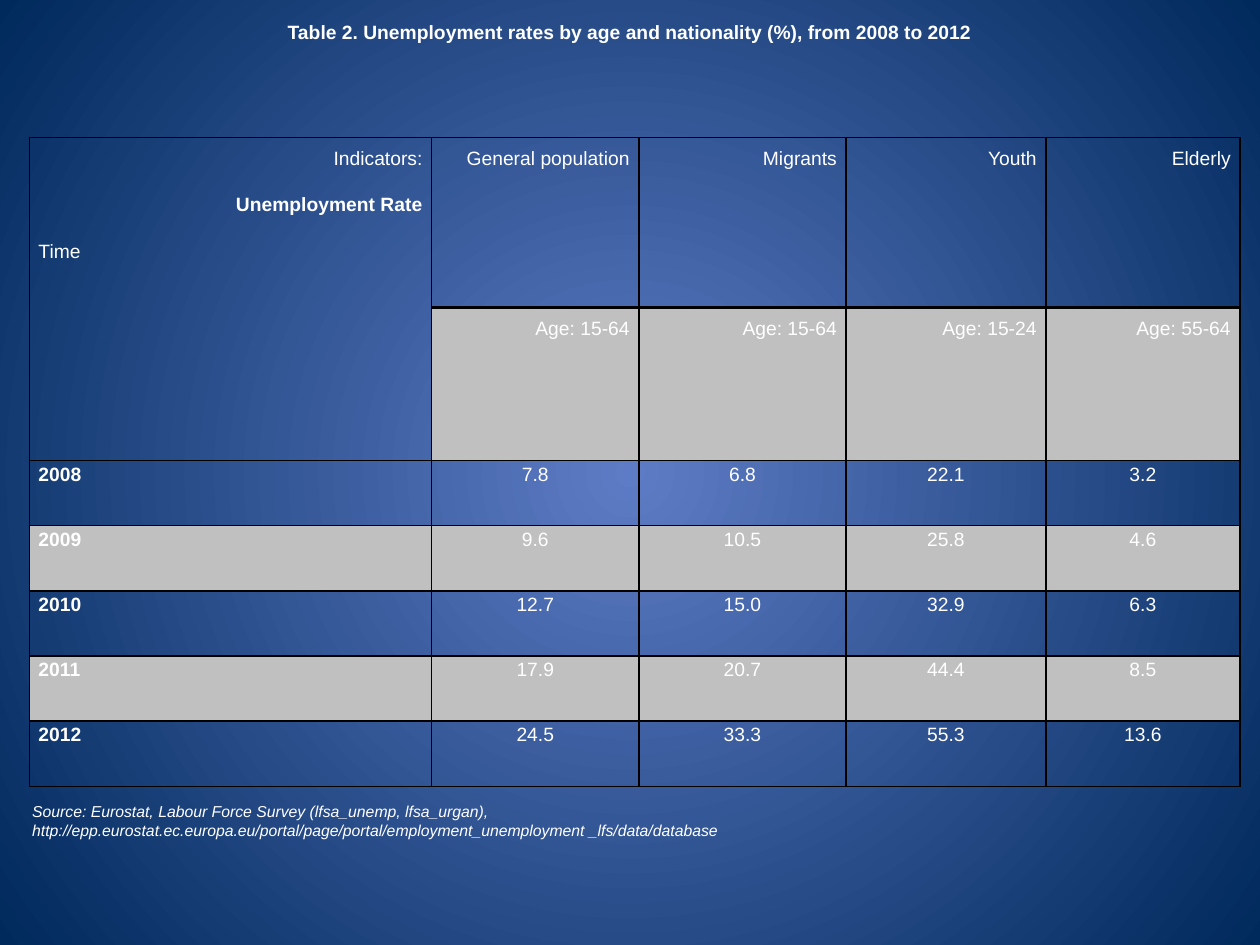
"""Build a slide with a table of unemployment rates by age and nationality."""
import pptx
import pptx.dml.color
import pptx.enum.text
import pptx.oxml
import pptx.oxml.ns
import pptx.util

Pt = pptx.util.Pt
Align = pptx.enum.text.PP_ALIGN
Anchor = pptx.enum.text.MSO_ANCHOR
COLORS = {"centre": "5E7CC5", "edge": "00295C", "text": "FFFFFF", "band": "C0C0C0", "line": "000000"}


def add_line(frame, number, text, size, align, bold=False, italic=False):
    para = frame.paragraphs[0] if number == 0 else frame.add_paragraph()
    para.alignment = align
    span = para.add_run()
    span.text = text
    span.font.name = "Arial"
    span.font.size = Pt(size)
    span.font.bold = bold
    span.font.italic = italic
    span.font.color.rgb = pptx.dml.color.RGBColor.from_string(COLORS["text"])
    return para


def add_border(cell, side, width):
    cell._tc.get_or_add_tcPr().append(pptx.oxml.parse_xml(
        f'<a:ln{side} {pptx.oxml.ns.nsdecls("a")} w="{Pt(width)}"><a:solidFill>'
        f'<a:srgbClr val="{COLORS["line"]}"/></a:solidFill></a:ln{side}>'))


deck = pptx.Presentation()
deck.slide_width, deck.slide_height = Pt(720), Pt(540)
page = deck.slides.add_slide(deck.slide_layouts[5])

fill = page.background.fill
fill.gradient()
for stop, name in zip(fill.gradient_stops, ("centre", "edge")):
    stop.color.rgb = pptx.dml.color.RGBColor.from_string(COLORS[name])
linear = page.element.find(".//" + pptx.oxml.ns.qn("a:lin"))
linear.getparent().replace(linear, pptx.oxml.parse_xml(
    f'<a:path {pptx.oxml.ns.nsdecls("a")} path="circle">'
    '<a:fillToRect l="50000" t="50000" r="50000" b="50000"/></a:path>'))

title = page.shapes.title
title.left, title.top, title.width, title.height = Pt(0), Pt(0), Pt(720), Pt(36)
title.text_frame.vertical_anchor = Anchor.MIDDLE
add_line(title.text_frame, 0, "Table 2. Unemployment rates by age and nationality (%), from 2008 to 2012",
         11, Align.CENTER, bold=True)

rows = [
    ["Indicators:\nUnemployment Rate\nTime", "General population", "Migrants", "Youth", "Elderly"],
    ["", "Age: 15-64", "Age: 15-64", "Age: 15-24", "Age: 55-64"],
    ["2008", "7.8", "6.8", "22.1", "3.2"],
    ["2009", "9.6", "10.5", "25.8", "4.6"],
    ["2010", "12.7", "15.0", "32.9", "6.3"],
    ["2011", "17.9", "20.7", "44.4", "8.5"],
    ["2012", "24.5", "33.3", "55.3", "13.6"],
]
widths = [229.9, 118.4, 118.4, 114.2, 110.9]
heights = [97, 87.5] + [37.25] * 5
table = page.shapes.add_table(len(rows), len(widths), Pt(16.8), Pt(78.7),
                              Pt(sum(widths)), Pt(sum(heights))).table
table.first_row = table.horz_banding = False
for column, width in zip(table.columns, widths):
    column.width = Pt(width)
for row, height in zip(table.rows, heights):
    row.height = Pt(height)
table.cell(0, 0).merge(table.cell(1, 0))

for row_number, values in enumerate(rows):
    header = row_number < 2
    for column_number, value in enumerate(values):
        cell = table.cell(row_number, column_number)
        cell.margin_left = cell.margin_right = Pt(5.2)
        cell.margin_top = cell.margin_bottom = Pt(0)
        thick = {(0, "B"), (1, "T")} if column_number else set()
        for side in "LRTB":
            add_border(cell, side, 2.25 if (row_number, side) in thick else 1)
        if row_number % 2 and (column_number or not header):
            cell.fill.solid()
            cell.fill.fore_color.rgb = pptx.dml.color.RGBColor.from_string(COLORS["band"])
        else:
            cell.fill.background()
        if not value:
            continue
        for number, text in enumerate(value.split("\n")):
            if text == "Time" or (not header and column_number == 0):
                align = Align.JUSTIFY
            else:
                align = Align.RIGHT if header else Align.CENTER
            bold = text == "Unemployment Rate" or (not header and column_number == 0)
            para = add_line(cell.text_frame, number, text, 11, align, bold)
            para.line_spacing = 1.5 if header else 1.15
            para.space_after = Pt(8)

source = page.shapes.add_textbox(Pt(11.3), Pt(454.6), Pt(680.4), Pt(29))
source.text_frame.word_wrap = True
source.text_frame.vertical_anchor = Anchor.MIDDLE
for number, text in enumerate([
    "Source: Eurostat, Labour Force Survey (lfsa_unemp, lfsa_urgan),",
    "http://epp.eurostat.ec.europa.eu/portal/page/portal/employment_unemployment _lfs/data/database",
]):
    add_line(source.text_frame, number, text, 9, Align.LEFT, italic=True)

deck.save("out.pptx")
